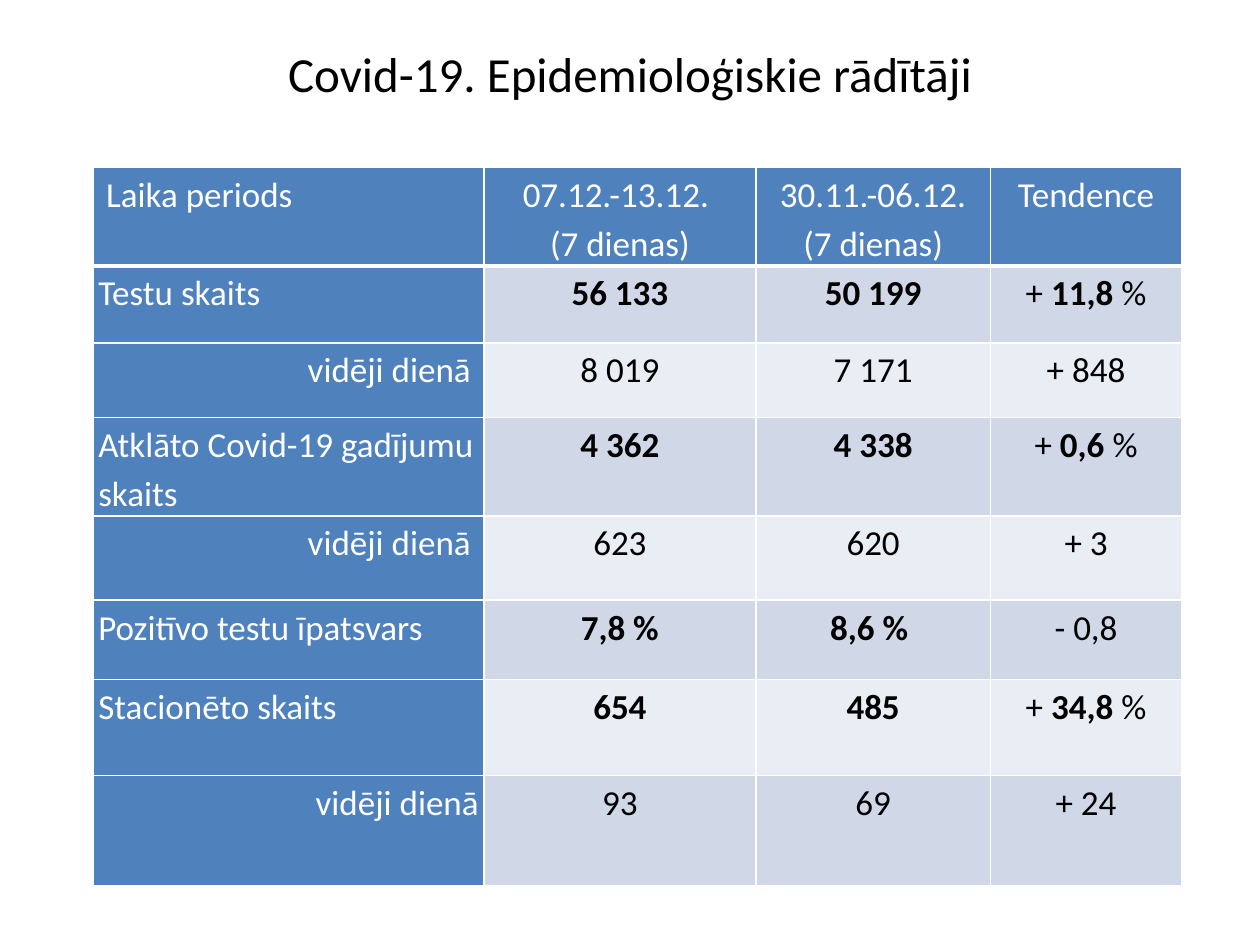
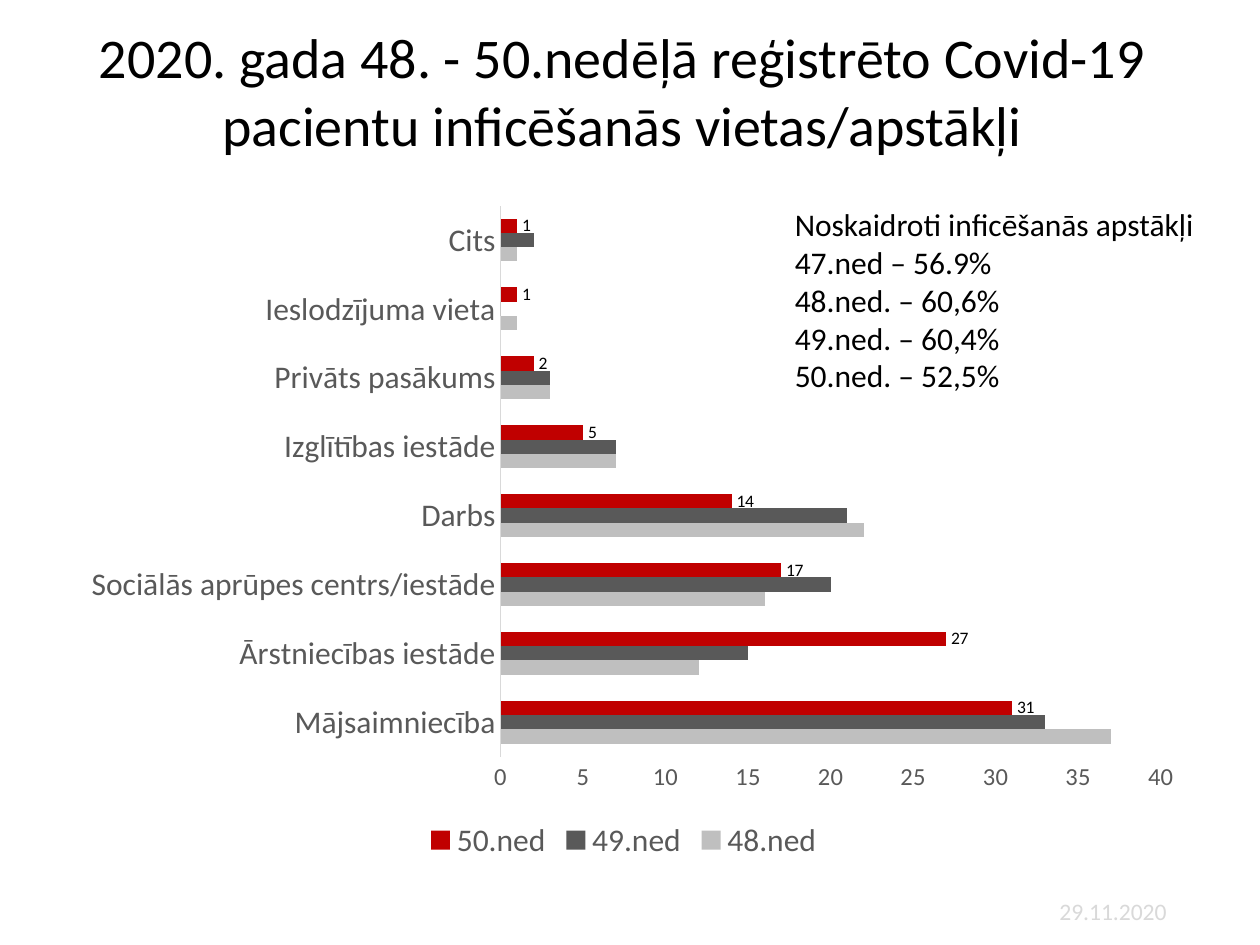
"""Builds two slides on Covid-19 indicators and places of infection."""
from lxml.etree import SubElement
from pptx import Presentation
from pptx.chart.data import CategoryChartData
from pptx.dml.color import RGBColor
from pptx.enum.chart import XL_CHART_TYPE, XL_LABEL_POSITION, XL_LEGEND_POSITION, XL_TICK_MARK
from pptx.enum.text import MSO_ANCHOR, PP_ALIGN
from pptx.oxml import parse_xml
from pptx.oxml.ns import nsdecls, qn
from pptx.util import Emu, Pt

PX = 9144
FONT = "Calibri"
BLACK = RGBColor(0x00, 0x00, 0x00)
WHITE = RGBColor(0xFF, 0xFF, 0xFF)
BLUE = RGBColor(0x4F, 0x81, 0xBD)
BAND_DARK = RGBColor(0xD0, 0xD8, 0xE8)
BAND_LIGHT = RGBColor(0xE9, 0xED, 0xF4)
RED = RGBColor(0xC0, 0x00, 0x00)
DARK_GREY = RGBColor(0x59, 0x59, 0x59)
MID_GREY = RGBColor(0xBF, 0xBF, 0xBF)
PALE_GREY = RGBColor(0xD9, 0xD9, 0xD9)


def style(font, size, color):
    font.name, font.size, font.bold = FONT, Pt(size), False
    font.color.rgb = color


def add_titled_slide(text, size, box):
    slide = deck.slides.add_slide(deck.slide_layouts[5])
    title = slide.shapes.title
    title.left, title.top, title.width, title.height = [Emu(n * PX) for n in box]
    title.text_frame.text = text
    title.text_frame.vertical_anchor = MSO_ANCHOR.MIDDLE
    heading = title.text_frame.paragraphs[0]
    heading.alignment = PP_ALIGN.CENTER
    style(heading.font, size, BLACK)
    return slide


deck = Presentation()
deck.slide_width, deck.slide_height = Emu(1000 * PX), Emu(750 * PX)

indicators_slide = add_titled_slide("Covid-19. Epidemioloģiskie rādītāji", 28, (69, 16, 862, 83))

COLUMN_WIDTHS = [310, 216, 186, 152]
ROW_HEIGHTS = [73, 61, 59, 73, 67, 63, 76, 88]
# Asterisks enclose bold text.
INDICATORS = [
    [" Laika periods", "07.12.-13.12. \n(7 dienas)", "30.11.-06.12.\n(7 dienas)", "Tendence"],
    ["Testu skaits", "*56 133*", "*50 199*", "+ *11,8 *%"],
    ["vidēji dienā ", "8 019", "7 171", "+ 848"],
    ["Atklāto Covid-19 gadījumu skaits", "*4 362*", "*4 338*", "+* 0,6 *%"],
    ["vidēji dienā ", "623", "620", "+ 3"],
    ["Pozitīvo testu īpatsvars", "*7,8 %*", "*8,6 % *", "- 0,8"],
    ["Stacionēto skaits", "*654*", "*485*", "+ *34,8 *%"],
    ["vidēji dienā", "93", "69", "+ 24"],
]
indicators = indicators_slide.shapes.add_table(
    len(ROW_HEIGHTS), len(COLUMN_WIDTHS), Emu(74 * PX), Emu(133 * PX),
    Emu(sum(COLUMN_WIDTHS) * PX), Emu(sum(ROW_HEIGHTS) * PX)).table
indicators.first_row = indicators.horz_banding = False
for column, width in zip(indicators.columns, COLUMN_WIDTHS):
    column.width = Emu(width * PX)

for r, (height, entries) in enumerate(zip(ROW_HEIGHTS, INDICATORS)):
    indicators.rows[r].height = Emu(height * PX)
    for c, entry in enumerate(entries):
        cell = indicators.cell(r, c)
        cell.margin_left = cell.margin_right = Emu(4 * PX)
        cell.margin_top = cell.margin_bottom = 0
        on_blue = r == 0 or c == 0
        band = BAND_DARK if r % 2 else BAND_LIGHT
        cell.fill.solid()
        cell.fill.fore_color.rgb = BLUE if on_blue else band

        for position, side in enumerate(("lnL", "lnR", "lnT", "lnB")):
            weight = Pt(3 if r == 0 and side == "lnB" else 1)
            cell._tc.tcPr.insert(position, parse_xml(
                f'<a:{side} {nsdecls("a")} w="{weight}"><a:solidFill>'
                f'<a:srgbClr val="{WHITE}"/></a:solidFill></a:{side}>'))

        if c:
            alignment = PP_ALIGN.CENTER
        else:
            alignment = PP_ALIGN.RIGHT if entry.startswith("vidēji") else PP_ALIGN.LEFT
        for i, line in enumerate(entry.split("\n")):
            paragraph = cell.text_frame.add_paragraph() if i else cell.text_frame.paragraphs[0]
            paragraph.alignment = alignment
            paragraph.line_spacing = 1.15
            style(paragraph.font, 20, WHITE if on_blue else BLACK)
            for k, piece in enumerate(line.split("*")):
                if piece:
                    run = paragraph.add_run()
                    run.text = piece
                    run.font.bold = k % 2 == 1

places_slide = add_titled_slide(
    "2020. gada 48. - 50.nedēļā reģistrēto Covid-19 pacientu inficēšanās vietas/apstākļi",
    32, (44, 9, 900, 125))

WEEKS = [
    ("48.ned", (37, 12, 16, 22, 7, 3, 1, 1), MID_GREY),
    ("49.ned", (33, 15, 20, 21, 7, 3, 0, 2), DARK_GREY),
    ("50.ned", (31, 27, 17, 14, 5, 2, 1, 1), RED),
]
places_data = CategoryChartData()
places_data.categories = [
    "Mājsaimniecība", "Ārstniecības iestāde", "Sociālās aprūpes centrs/iestāde", "Darbs",
    "Izglītības iestāde", "Privāts pasākums", "Ieslodzījuma vieta", "Cits"]
for week, shares, color in WEEKS:
    places_data.add_series(week, shares)
places = places_slide.shapes.add_chart(
    XL_CHART_TYPE.BAR_CLUSTERED, Emu(51 * PX), Emu(147 * PX),
    Emu(888 * PX), Emu(540 * PX), places_data).chart
style(places.font, 10, BLACK)
places.has_title = False
places.has_legend = True
places.legend.position = XL_LEGEND_POSITION.BOTTOM
places.legend.include_in_layout = False
style(places.legend.font, 18, DARK_GREY)

bars = places.plots[0]
bars.gap_width = 182
bars.vary_by_categories = False
for series, (week, shares, color) in zip(bars.series, WEEKS):
    series.format.fill.solid()
    series.format.fill.fore_color.rgb = color
    series.invert_if_negative = False

latest_labels = bars.series[-1].data_labels
latest_labels.show_value = True
latest_labels.position = XL_LABEL_POSITION.OUTSIDE_END
latest_labels.number_format = "#,##0"
latest_labels.number_format_is_linked = False
style(latest_labels.font, 10, BLACK)

for axis, size in ((places.category_axis, 18), (places.value_axis, 14)):
    axis.major_tick_mark = axis.minor_tick_mark = XL_TICK_MARK.NONE
    axis.has_major_gridlines = False
    style(axis.tick_labels.font, size, DARK_GREY)
places.category_axis.format.line.color.rgb = PALE_GREY
places.category_axis.format.line.width = Pt(0.75)
share_axis = places.value_axis
share_axis.format.line.fill.background()
share_axis.minimum_scale, share_axis.maximum_scale, share_axis.major_unit = 0, 40, 5
share_axis.tick_labels.number_format = "0"
share_axis.tick_labels.number_format_is_linked = False

plot_area = places._chartSpace.chart.plotArea
for old_layout in plot_area.findall(qn("c:layout")):
    plot_area.remove(old_layout)
layout = parse_xml(f'<c:layout {nsdecls("c")}><c:manualLayout/></c:layout>')
for tag, value in (("layoutTarget", "inner"), ("xMode", "edge"), ("yMode", "edge"),
                   ("x", "0.39"), ("y", "0.03"), ("w", "0.59"), ("h", "0.81")):
    SubElement(layout[0], qn(f"c:{tag}")).set("val", value)
plot_area.insert(0, layout)

KNOWN_CIRCUMSTANCES = [
    "Noskaidroti inficēšanās apstākļi", "47.ned – 56.9%", "48.ned. – 60,6%",
    "49.ned. – 60,4%", "50.ned. – 52,5%"]
for lines, box, size, color, wraps in (
        (["29.11.2020"], (831, 707, 130, 33), 13.5, PALE_GREY, True),
        (KNOWN_CIRCUMSTANCES, (621, 158, 340, 162), 18, BLACK, False)):
    frame = places_slide.shapes.add_textbox(*[Emu(n * PX) for n in box]).text_frame
    frame.word_wrap = wraps
    frame.text = "\n".join(lines)
    for paragraph in frame.paragraphs:
        style(paragraph.font, size, color)

deck.save("out.pptx")
